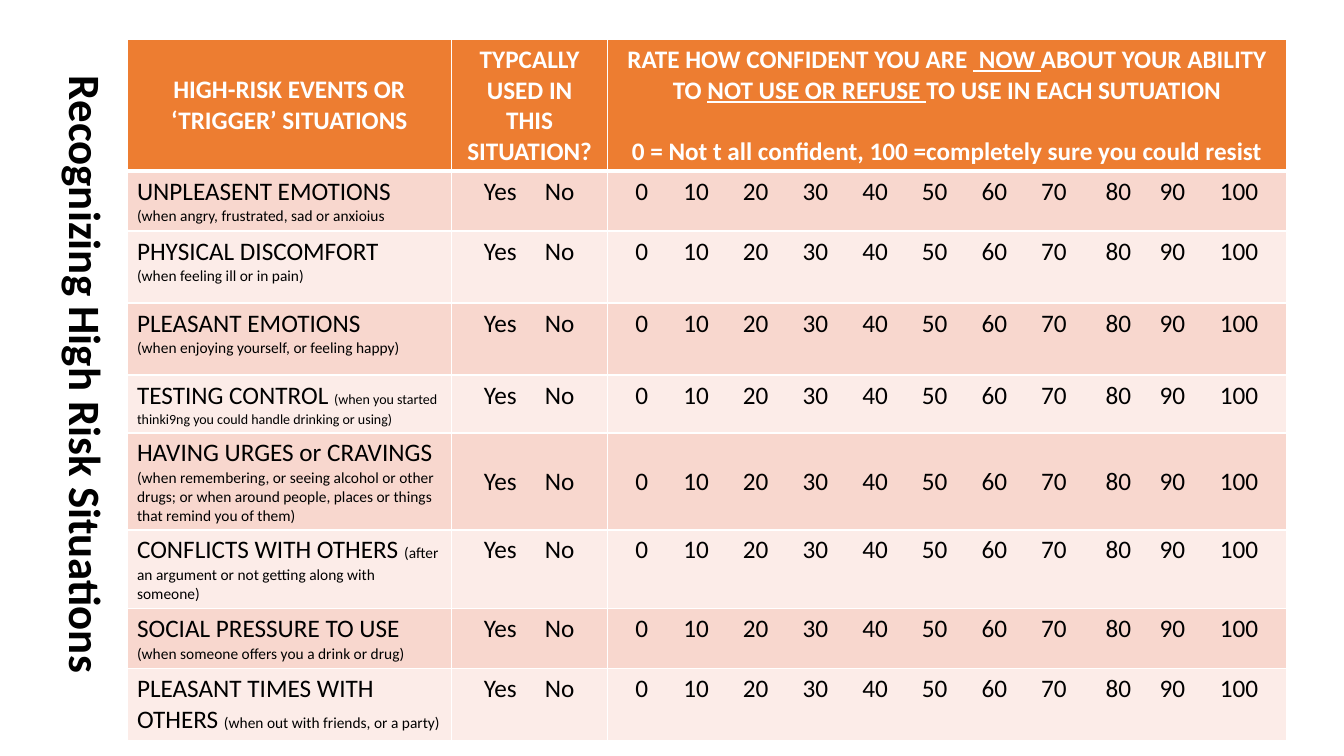
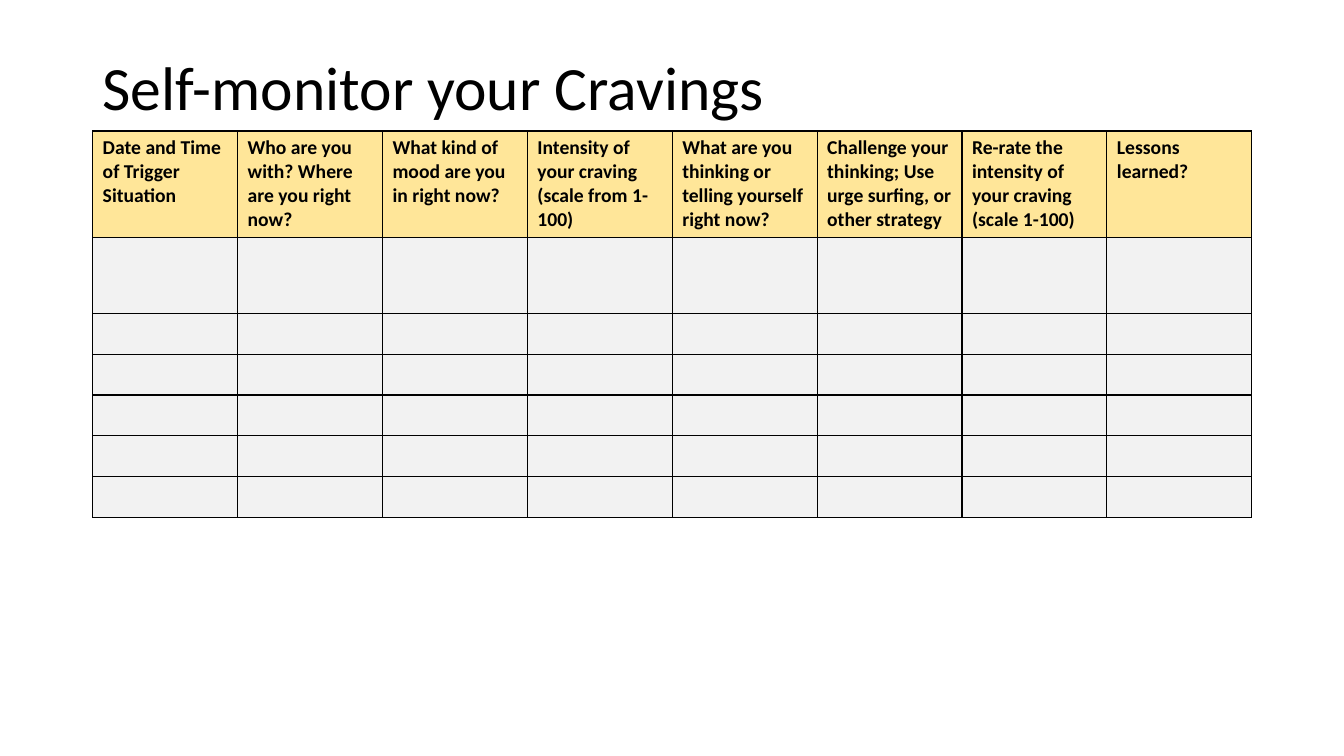
from dataclasses import dataclass
from itertools import accumulate, repeat

from lxml.etree import SubElement
from pptx import Presentation
from pptx.dml.color import RGBColor
from pptx.enum.text import MSO_ANCHOR, PP_ALIGN
from pptx.oxml.ns import qn
from pptx.util import Pt


@dataclass(frozen=True)
class Theme:
    font: str = "Calibri"
    black: str = "000000"
    white: str = "FFFFFF"
    orange: str = "ED7D31"
    peach: str = "F8D7CE"
    pale_peach: str = "FCECE8"
    yellow: str = "FFE699"
    grey: str = "F2F2F2"
    title: int = 44
    side_title: int = 32
    body: int = 18
    column_head: int = 14
    detail: int = 11
    fine_detail: int = 10


theme = Theme()


def write(frame, paragraphs, color, bold=False, align=PP_ALIGN.LEFT, tabs=(), size=None):
    for index, pieces in enumerate(paragraphs):
        paragraph = frame.paragraphs[0] if index == 0 else frame.add_paragraph()
        paragraph.alignment = align
        if tabs:
            stops = SubElement(paragraph._p.get_or_add_pPr(), qn("a:tabLst"))
            for position in tabs:
                SubElement(stops, qn("a:tab"), pos=str(Pt(position)), algn="l")
        font = paragraph.font
        font.name, font.bold = theme.font, bold
        font.color.rgb = RGBColor.from_string(color)
        if size:
            font.size = Pt(size)
        for text, *style in pieces:
            run = paragraph.add_run()
            run.text = text
            if "underline" in style:
                run.font.underline = True
            elif style:
                run.font.size = Pt(style[0])


def add_grid(slide, left, top, widths, heights, fills, border, rule=1):
    grid = slide.shapes.add_table(len(heights), len(widths), Pt(left), Pt(top),
                                  Pt(sum(widths)), Pt(sum(heights))).table
    grid.horz_banding = False
    for column, width in zip(grid.columns, widths):
        column.width = Pt(width)
    for index, (row, height, fill) in enumerate(zip(grid.rows, heights, fills)):
        row.height = Pt(height)
        edges = {"lnL": 1, "lnR": 1, "lnT": rule if index == 1 else 1, "lnB": rule if index == 0 else 1}
        for cell in row.cells:
            for edge, weight in edges.items():
                line = SubElement(cell._tc.get_or_add_tcPr(), qn(f"a:{edge}"), w=str(Pt(weight)))
                SubElement(SubElement(line, qn("a:solidFill")), qn("a:srgbClr"), val=border)
            cell.fill.solid()
            cell.fill.fore_color.rgb = RGBColor.from_string(fill)
    return grid


deck = Presentation()
deck.slide_width, deck.slide_height = Pt(960), Pt(540)

titles = [
    ("Recognizing High Risk Situations", (-162.7, 221, 445, 92.9), 90, theme.side_title, True, PP_ALIGN.CENTER),
    ("Self-monitor your Cravings", (66.2, 12.2, 828, 104.4), 0, theme.title, False, PP_ALIGN.LEFT),
]
for text, place, rotation, size, bold, align in titles:
    slide = deck.slides.add_slide(deck.slide_layouts[6])
    title = slide.shapes.add_textbox(*map(Pt, place))
    title.rotation = rotation
    title.text_frame.word_wrap = True
    title.text_frame.vertical_anchor = MSO_ANCHOR.MIDDLE
    write(title.text_frame, [[(text,)]], theme.black, bold, align, size=size)
    title.text_frame.paragraphs[0].line_spacing = 0.9

risk_slide, craving_slide = deck.slides

risk_heads = [
    [[("HIGH-RISK EVENTS OR ‘TRIGGER’ SITUATIONS",)]],
    [[("TYPCALLY USED IN THIS",)], [("SITUATION?",)]],
    [[("RATE HOW CONFIDENT YOU ARE ",), (" NOW ", "underline"), ("ABOUT YOUR ABILITY TO ",),
      ("NOT USE OR REFUSE ", "underline"), ("TO USE IN EACH SUTUATION",)],
     [("0 = Not t all confident, 100 =completely sure you could resist",)]],
]
body, detail, fine = theme.body, theme.detail, theme.fine_detail
situations = [
    (42.7, [[("UNPLEASENT EMOTIONS", body)], [("(when angry, frustrated, sad or anxioius", detail)]]),
    (51.4, [[("PHYSICAL DISCOMFORT", body)], [("(when feeling ill or in pain)", detail)]]),
    (51.4, [[("PLEASANT EMOTIONS", body)], [("(when enjoying yourself, or feeling happy)", detail)]]),
    (41.4, [[("TESTING CONTROL ", body),
             ("(when you started thinki9ng you could handle drinking or using)", fine)]]),
    (69.3, [[("HAVING URGES or CRAVINGS ", body),
             ("(when remembering, or seeing alcohol or other drugs; or when around people, "
              "places or things that remind you of them)", detail)]]),
    (56.4, [[("CONFLICTS WITH OTHERS ", body),
             ("(after an argument or not getting along with someone)", detail)]]),
    (42.7, [[("SOCIAL PRESSURE TO USE", body)], [("(when someone offers you a drink or drug)", detail)]]),
    (51.4, [[("PLEASANT TIMES WITH OTHERS ", body), ("(when out with friends, or a party)", detail)]]),
]
heights = [94.3] + [height for height, _ in situations]
bands = [theme.orange] + [theme.peach, theme.pale_peach] * 4
ratings = add_grid(risk_slide, 90.7, 28.1, [231.8, 111.6, 484.6], heights, bands, theme.white, rule=3)

for cell, paragraphs in zip(ratings.rows[0].cells, risk_heads):
    write(cell.text_frame, paragraphs, theme.white, True, PP_ALIGN.CENTER, size=body)
    cell.vertical_anchor = MSO_ANCHOR.MIDDLE
ratings.cell(0, 2).text_frame.paragraphs[1].space_before = Pt(22)

answers = "".join(f"\t{answer}" for answer in ("Yes", "No"))
scale = "".join(f"\t{score}" for score in range(0, 101, 10))
answer_tabs = [16, 59.5]
scale_tabs = [12.5, *accumulate(repeat(42.6, 6), initial=46.8), 348.5, 387, 430]
for index, (_, situation) in enumerate(situations, 1):
    event, used, confidence = ratings.rows[index].cells
    write(event.text_frame, situation, theme.black)
    for cell, text, tabs in ((used, answers, answer_tabs), (confidence, scale, scale_tabs)):
        write(cell.text_frame, [[(text,)]], theme.black, tabs=tabs, size=body)
        if "CRAVINGS" in situation[0][0][0]:
            cell.vertical_anchor = MSO_ANCHOR.MIDDLE

craving_heads = [
    "Date and Time of Trigger Situation",
    "Who are you with? Where are you right now?",
    "What kind of mood are you in right now?",
    "Intensity of your craving (scale from 1-100)",
    "What are you thinking or telling yourself right now?",
    "Challenge your thinking; Use urge surfing, or other strategy",
    "Re-rate the intensity of your craving (scale 1-100)",
    "Lessons learned?",
]
diary = add_grid(craving_slide, 66.2, 93.6, [103.5] * 8, [75.9, 54.3] + [29.2] * 5,
                 [theme.yellow] + [theme.grey] * 6, theme.black)
for cell, head in zip(diary.rows[0].cells, craving_heads):
    write(cell.text_frame, [[(head,)]], theme.black, True, size=theme.column_head)

deck.save("out.pptx")
